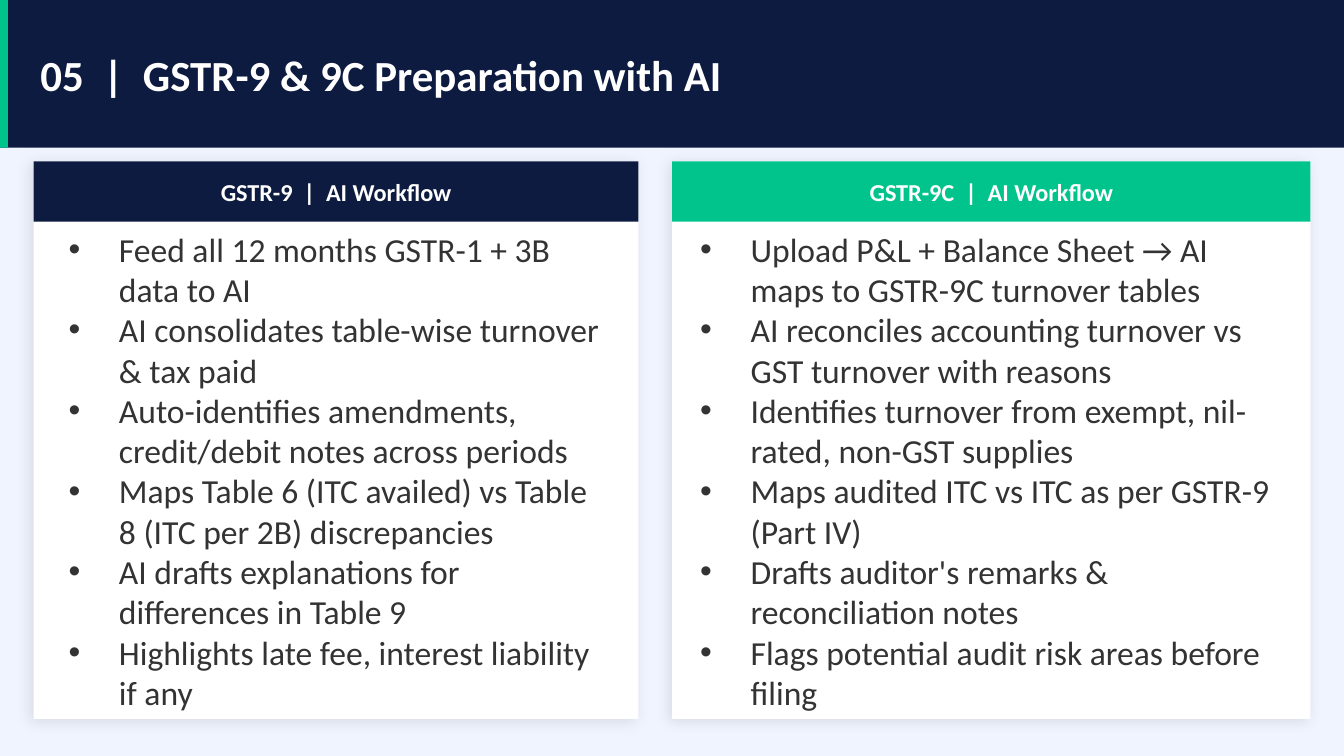
from lxml.etree import SubElement
from pptx import Presentation
from pptx.dml.color import RGBColor
from pptx.enum.shapes import MSO_SHAPE
from pptx.enum.text import MSO_ANCHOR, MSO_AUTO_SIZE, PP_ALIGN
from pptx.oxml import parse_xml
from pptx.oxml.ns import nsdecls, qn
from pptx.util import Pt

NAVY = RGBColor(0x0D, 0x1B, 0x40)
GREEN = RGBColor(0x00, 0xC4, 0x8C)
WHITE = RGBColor(0xFF, 0xFF, 0xFF)
PALE_BLUE = RGBColor(0xF0, 0xF4, 0xFF)
DARK_GREY = RGBColor(0x33, 0x33, 0x33)

CARD_TOP, CARD_HEIGHT, HEADER_HEIGHT = 86.4, 298.8, 32.4
LIST_TOP, LIST_HEIGHT = 126, 252
BULLET_INDENT = Pt(27)

# Card left and width, list left and width, header colour, header, steps
WORKFLOWS = [
    (18, 324, 32.4, 298.8, NAVY, "GSTR-9  |  AI Workflow", [
        "Feed all 12 months GSTR-1 + 3B data to AI",
        "AI consolidates table-wise turnover & tax paid",
        "Auto-identifies amendments, credit/debit notes across periods",
        "Maps Table 6 (ITC availed) vs Table 8 (ITC per 2B) discrepancies",
        "AI drafts explanations for differences in Table 9",
        "Highlights late fee, interest liability if any",
    ]),
    (360, 342, 370.8, 320.4, GREEN, "GSTR-9C  |  AI Workflow", [
        "Upload P&L + Balance Sheet → AI maps to GSTR-9C turnover tables",
        "AI reconciles accounting turnover vs GST turnover with reasons",
        "Identifies turnover from exempt, nil-rated, non-GST supplies",
        "Maps audited ITC vs ITC as per GSTR-9 (Part IV)",
        "Drafts auditor's remarks & reconciliation notes",
        "Flags potential audit risk areas before filing",
    ]),
]

SHADOW = f"""<a:effectLst {nsdecls('a')}>
  <a:outerShdw blurRad="{Pt(8)}" dist="{Pt(2)}" dir="8100000" algn="bl" rotWithShape="0">
    <a:srgbClr val="000000"><a:alpha val="10000"/></a:srgbClr>
  </a:outerShdw>
</a:effectLst>"""

prs = Presentation()
prs.slide_width, prs.slide_height = Pt(720), Pt(405)
slide = prs.slides.add_slide(prs.slide_layouts.get_by_name("Two Content"))
slide.background.fill.solid()
slide.background.fill.fore_color.rgb = PALE_BLUE
title, *step_lists = slide.placeholders


def add_block(left, top, width, height, color):
    block = slide.shapes.add_shape(
        MSO_SHAPE.RECTANGLE, Pt(left), Pt(top), Pt(width), Pt(height))
    block.shadow.inherit = False
    block.fill.solid()
    block.fill.fore_color.rgb = color
    block.line.fill.background()
    return block


def add_run(paragraph, text, size, color, bold=False):
    run = paragraph.add_run()
    run.text = text
    run.font.name = "Calibri"
    run.font.size = Pt(size)
    run.font.bold = bold
    run.font.color.rgb = color


# Title band
add_block(0, 0, 720, 79.2, NAVY)
add_block(0, 0, 4.32, 79.2, GREEN)
title.left, title.top, title.width, title.height = Pt(14.4), Pt(0), Pt(691.2), Pt(79.2)
title.text_frame.auto_size = MSO_AUTO_SIZE.NONE
title.text_frame.vertical_anchor = MSO_ANCHOR.MIDDLE
heading = title.text_frame.paragraphs[0]
heading.alignment = PP_ALIGN.LEFT
add_run(heading, "05  |  GSTR-9 & 9C Preparation with AI", 23, WHITE, bold=True)

# Workflow cards
for step_list, workflow in zip(step_lists, WORKFLOWS):
    left, width, list_left, list_width, color, header_text, steps = workflow
    card = add_block(left, CARD_TOP, width, CARD_HEIGHT, WHITE)
    properties = card.element.spPr
    properties.replace(properties.find(qn("a:effectLst")), parse_xml(SHADOW))

    header = add_block(left, CARD_TOP, width, HEADER_HEIGHT, color).text_frame
    header.margin_left = header.margin_right = Pt(0)
    header.margin_top = header.margin_bottom = Pt(0)
    header.vertical_anchor = MSO_ANCHOR.MIDDLE
    header.paragraphs[0].alignment = PP_ALIGN.CENTER
    add_run(header.paragraphs[0], header_text, 13, WHITE, bold=True)

    step_list.left, step_list.top = Pt(list_left), Pt(LIST_TOP)
    step_list.width, step_list.height = Pt(list_width), Pt(LIST_HEIGHT)
    body = step_list.text_frame
    body.auto_size = MSO_AUTO_SIZE.NONE
    body.vertical_anchor = MSO_ANCHOR.MIDDLE
    body.margin_left = body.margin_right = Pt(4.32)
    body.margin_top = body.margin_bottom = Pt(4.32)
    for number, step in enumerate(steps):
        paragraph = body.add_paragraph() if number else body.paragraphs[0]
        layout = paragraph._p.get_or_add_pPr()
        layout.set("marL", str(BULLET_INDENT))
        layout.set("indent", str(-BULLET_INDENT))
        SubElement(layout, qn("a:buChar"), char="•")
        paragraph.space_before = Pt(0)
        add_run(paragraph, step, 18, DARK_GREY)

# Bring the placeholders in front of the bands and cards
for placeholder in (title, *step_lists):
    slide.shapes.element.append(placeholder.element)

prs.save("out.pptx")
